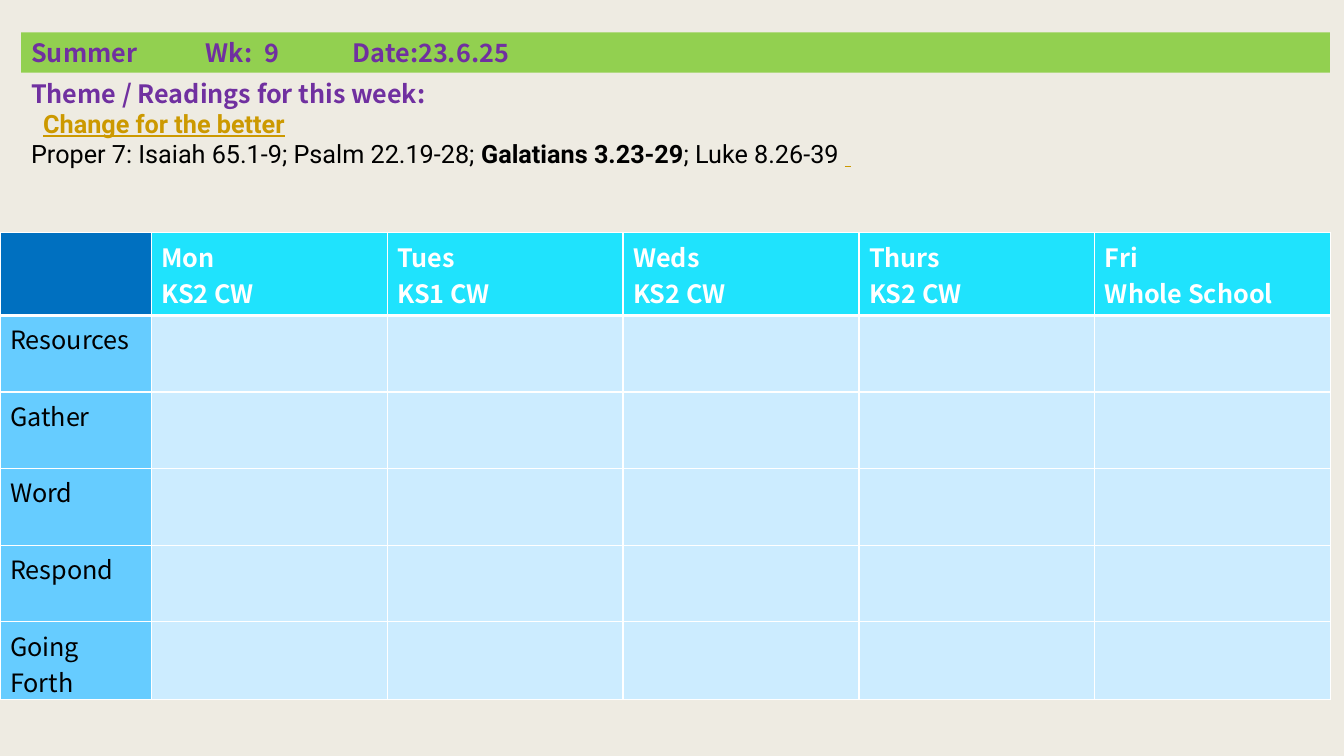
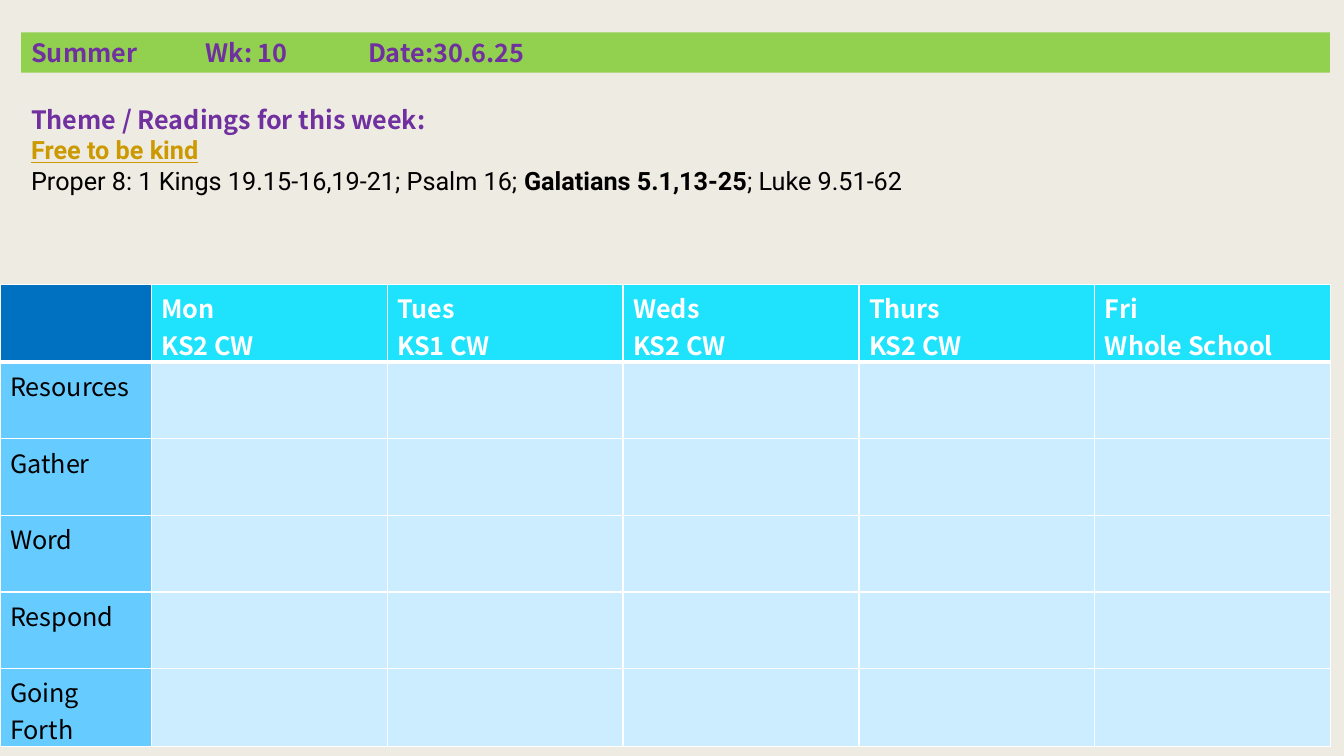
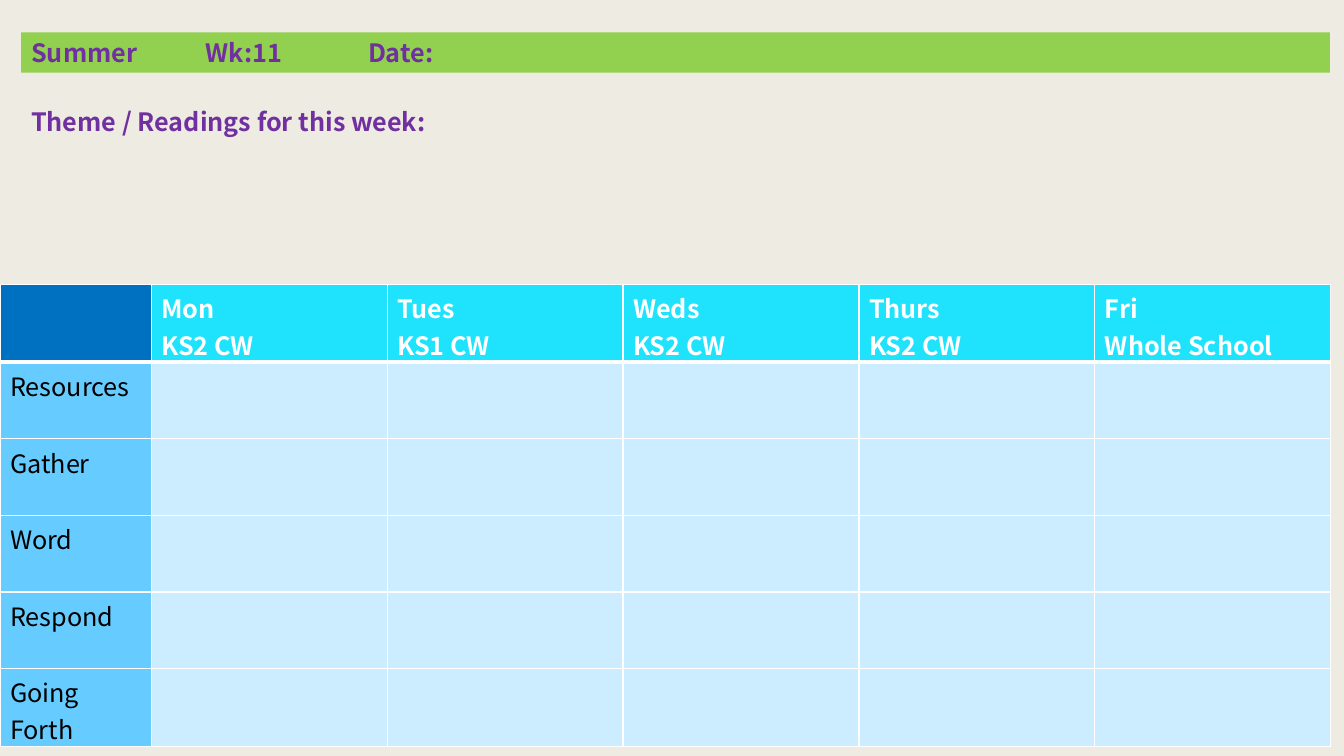
from dataclasses import dataclass

from lxml import etree
from pptx import Presentation
from pptx import util as u
from pptx.dml.color import RGBColor
from pptx.enum import text as t
from pptx.oxml import ns


@dataclass(frozen=True)
class Theme:
    background: str = "EEEBE2"
    band: str = "92D050"
    heading: str = "7030A0"
    topic: str = "CC9900"
    body: str = "000000"
    white: str = "FFFFFF"
    corner: str = "0070C0"
    day: str = "1FE3FD"
    stage: str = "66CCFF"
    entry: str = "CCECFF"
    font: str = "Noto Sans CJK JP"
    reading_font: str = "Roboto"
    space_font: str = "Times New Roman"
    size: int = 18
    thin: int = 1
    thick: int = 3


THEME = Theme()
TOPIC = dict(font=THEME.reading_font, color=THEME.topic, bold=True, underline=True)
READING = dict(font=THEME.reading_font, color=THEME.body, bold=False)
KEY_READING = dict(READING, bold=True)
TRAILING_SPACE = dict(TOPIC, font=THEME.space_font, bold=False)

DAYS = [("Mon", "KS2 CW"), ("Tues", "KS1 CW"), ("Weds", "KS2 CW"),
        ("Thurs", "KS2 CW"), ("Fri", "Whole School")]
STAGES = ["Resources", "Gather", "Word", "Respond", "Going Forth"]
LEFT = 0.21
STAGE_WIDTH, DAY_WIDTH, ROW_HEIGHT = 1.5, 2.34, 0.76

WEEKS = [
    dict(heading="Summer\tWk:\t9\tDate:23.6.25", heading_tabs=(1.73, 2.31, 3.19),
         theme_top=0.72, theme_height=1.01, table_top=2.31, header_height=0.82,
         topic_tabs=(0.12,),
         readings=[
             [("\tChange for the better", TOPIC)],
             [("Proper 7: Isaiah 65.1-9; Psalm 22.19-28; ", READING),
              ("Galatians 3.23-29", KEY_READING),
              ("; Luke 8.26-39 ", READING),
              (" ", TRAILING_SPACE)]]),
    dict(heading="Summer\tWk: 10\tDate:30.6.25", heading_tabs=(1.73, 3.34),
         theme_top=0.98, theme_height=1.01, table_top=2.82,
         readings=[
             [("Free to be kind", TOPIC)],
             [("Proper 8: 1 Kings 19.15-16,19-21; Psalm 16; ", READING),
              ("Galatians 5.1,13-25", KEY_READING),
              ("; Luke 9.51-62", READING)]]),
    dict(heading="Summer\tWk:11\tDate:", heading_tabs=(1.73, 3.34),
         theme_top=1.01, theme_height=0.4, table_top=2.82),
]


def write(frame, lines, tabs=(), **style):
    """Write one paragraph per line; a line is a string or (text, style) runs."""
    for index, line in enumerate(lines):
        paragraph = frame.add_paragraph() if index else frame.paragraphs[0]
        paragraph.alignment = t.PP_ALIGN.LEFT
        if tabs:
            add_tabs(paragraph, tabs)
        for words, own_style in [(line, {})] if isinstance(line, str) else line:
            add_run(paragraph, words, **{**style, **own_style})


def add_run(paragraph, words, font=THEME.font, size=THEME.size,
            color=THEME.body, bold=False, underline=False):
    run = paragraph.add_run()
    run.text = words
    run.font.name = font
    run.font.size = u.Pt(size)
    run.font.bold = bold
    run.font.underline = underline
    run.font.color.rgb = RGBColor.from_string(color)


def add_tabs(paragraph, positions):
    properties = paragraph._p.get_or_add_pPr()
    tab_list = etree.SubElement(properties, ns.qn("a:tabLst"))
    for position in positions:
        etree.SubElement(tab_list, ns.qn("a:tab"), pos=str(u.Inches(position)), algn="l")


def paint(target, color):
    target.fill.solid()
    target.fill.fore_color.rgb = RGBColor.from_string(color)


def add_borders(cell, **widths):
    """Draw cell sides, given as L, R, T and B widths in points."""
    properties = cell._tc.get_or_add_tcPr()
    for side, width in widths.items():
        line = etree.SubElement(properties, ns.qn(f"a:ln{side}"), w=str(u.Pt(width)))
        fill = etree.SubElement(line, ns.qn("a:solidFill"))
        etree.SubElement(fill, ns.qn("a:srgbClr"), val=THEME.white)


class Planner:
    def __init__(self):
        self.presentation = Presentation()
        self.presentation.slide_width = u.Inches(13.33)
        self.presentation.slide_height = u.Inches(7.5)
        paint(self.presentation.slide_master.background, THEME.background)
        self.slide = None

    def add_slide(self):
        title_only = self.presentation.slide_layouts[5]
        self.slide = self.presentation.slides.add_slide(title_only)

    def prepare(self, shape):
        frame = shape.text_frame
        frame.word_wrap = True
        frame.auto_size = t.MSO_AUTO_SIZE.NONE
        frame.vertical_anchor = t.MSO_ANCHOR.MIDDLE
        return frame

    def heading_band(self, words, tabs):
        title = self.slide.shapes.title
        title.left, title.top = u.Inches(LEFT), u.Inches(0.32)
        title.width, title.height = u.Inches(12.98), u.Inches(0.4)
        paint(title, THEME.band)
        write(self.prepare(title), [words], tabs, color=THEME.heading, bold=True)

    def theme_box(self, top, height, readings, tabs):
        box = self.slide.shapes.add_textbox(
            u.Inches(LEFT), u.Inches(top), u.Inches(12.18), u.Inches(height))
        write(self.prepare(box), ["Theme / Readings for this week:", *readings], tabs,
              color=THEME.heading, bold=True)

    def timetable(self, top, header_height):
        rows, columns = len(STAGES) + 1, len(DAYS) + 1
        widths = [STAGE_WIDTH] + [DAY_WIDTH] * len(DAYS)
        heights = [header_height] + [ROW_HEIGHT] * len(STAGES)
        table = self.slide.shapes.add_table(
            rows, columns, 0, u.Inches(top),
            u.Inches(sum(widths)), u.Inches(sum(heights))).table
        for column, width in zip(table.columns, widths):
            column.width = u.Inches(width)
        for row, height in zip(table.rows, heights):
            row.height = u.Inches(height)

        self.cell(table, 0, 0, THEME.corner)
        for column, day in enumerate(DAYS, 1):
            self.cell(table, 0, column, THEME.day, day, color=THEME.white, bold=True)
        for row, stage in enumerate(STAGES, 1):
            self.cell(table, row, 0, THEME.stage, [stage])
            for column in range(1, columns):
                self.cell(table, row, column, THEME.entry)

    def cell(self, table, row, column, fill, lines=(), **style):
        cell = table.cell(row, column)
        cell.margin_bottom = 0
        if row:
            add_borders(cell, L=THEME.thin, R=THEME.thin, B=THEME.thin)
        else:
            add_borders(cell, L=THEME.thin, R=THEME.thin, T=THEME.thin, B=THEME.thick)
        paint(cell, fill)
        write(cell.text_frame, lines, **style)

    def week(self, heading, heading_tabs, theme_top, theme_height, table_top,
             header_height=ROW_HEIGHT, readings=(), topic_tabs=()):
        self.add_slide()
        self.heading_band(heading, heading_tabs)
        self.theme_box(theme_top, theme_height, readings, topic_tabs)
        self.timetable(table_top, header_height)


def main():
    planner = Planner()
    for week in WEEKS:
        planner.week(**week)
    planner.presentation.save("out.pptx")


if __name__ == "__main__":
    main()
